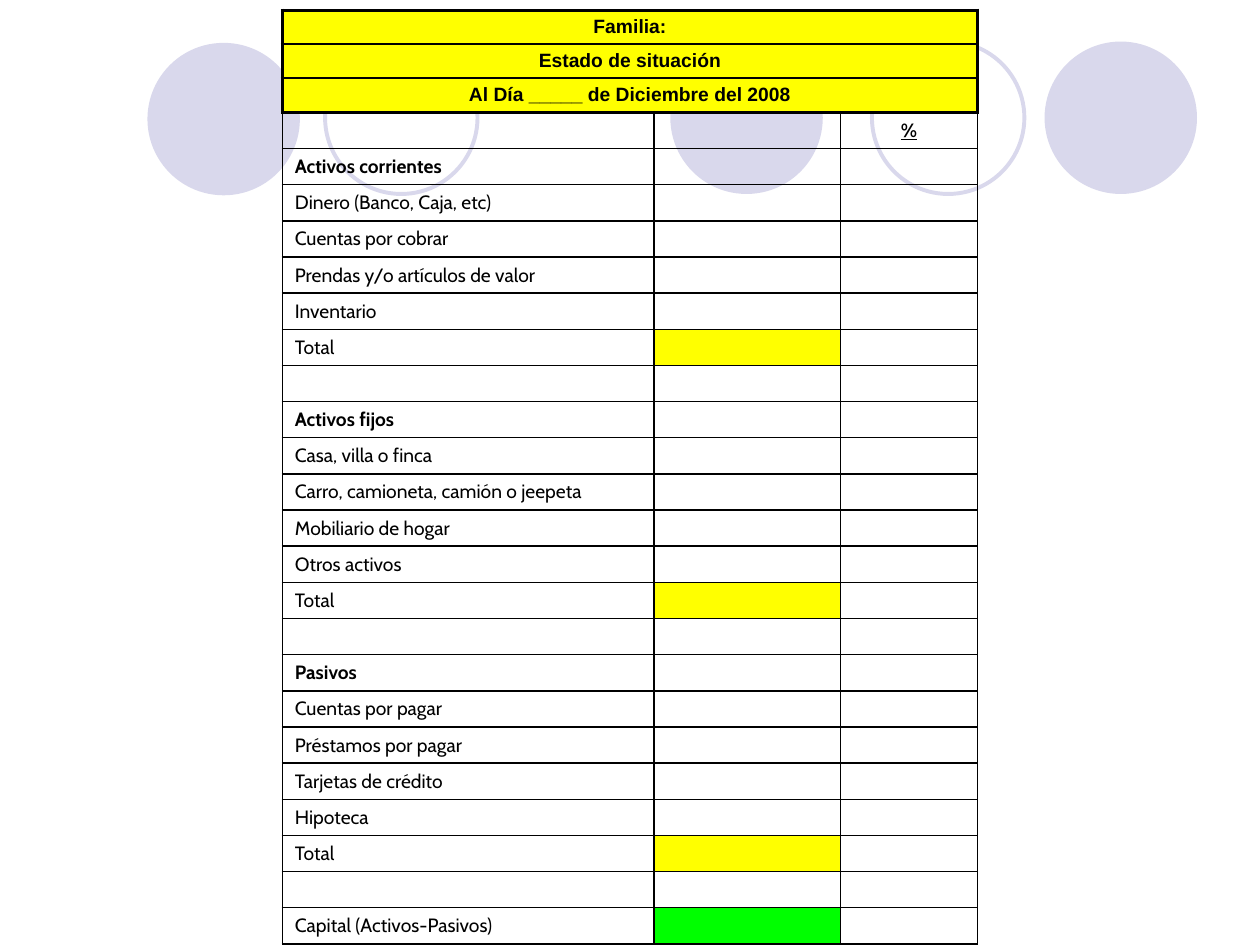
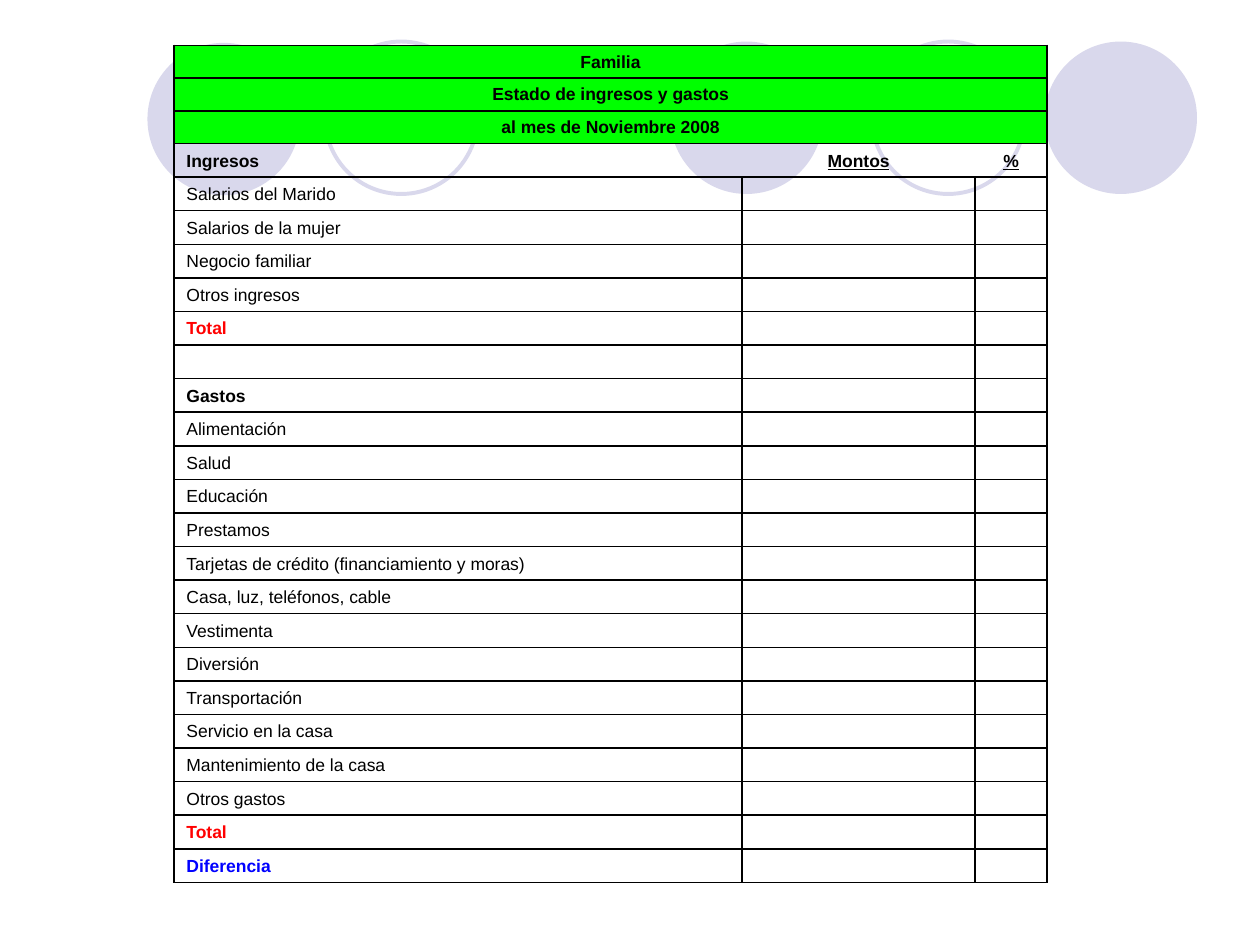
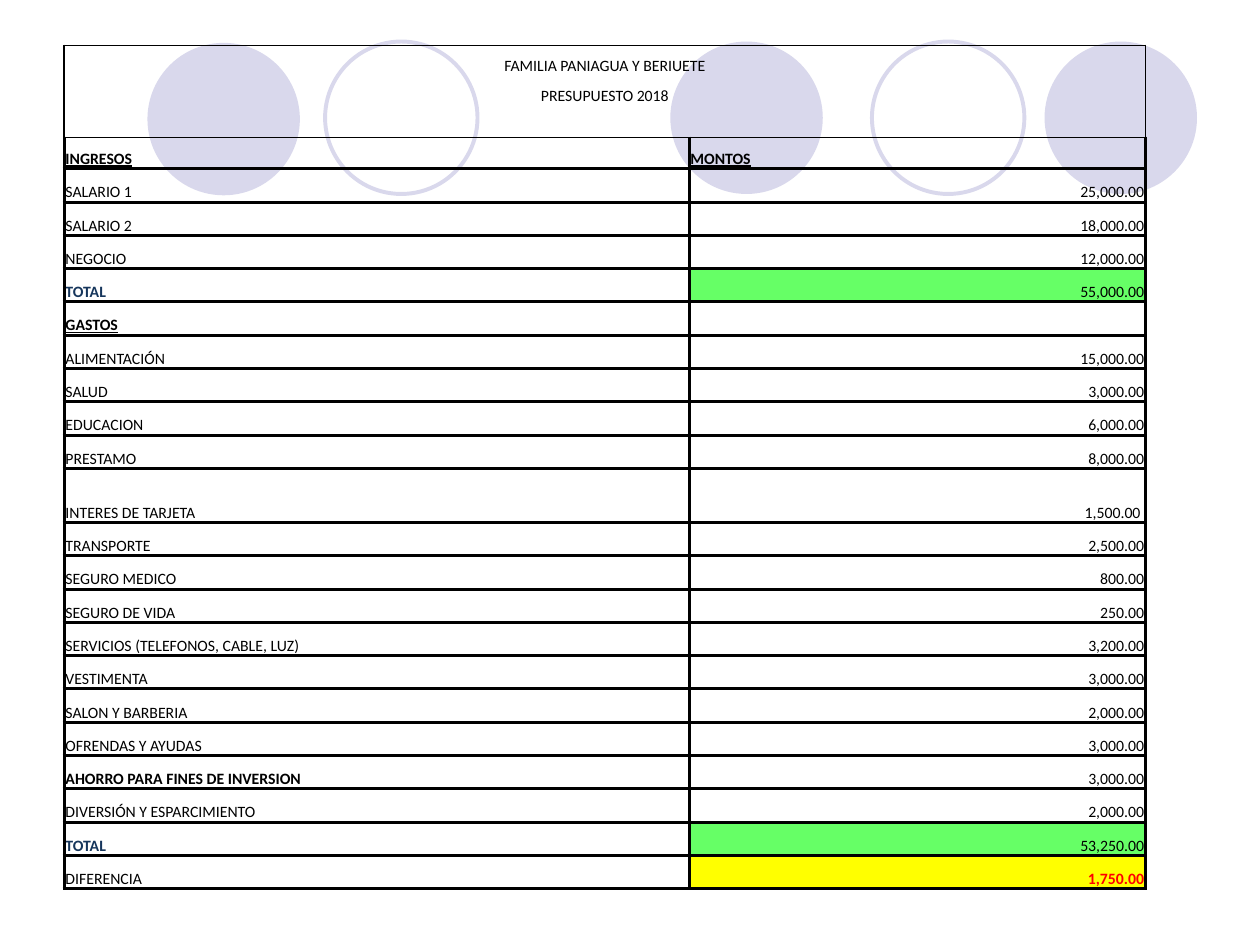
from dataclasses import dataclass, replace

from lxml.etree import SubElement
from pptx import Presentation
from pptx.dml.color import RGBColor
from pptx.enum.shapes import MSO_SHAPE
from pptx.enum.text import MSO_ANCHOR, PP_ALIGN
from pptx.oxml.ns import qn
from pptx.util import Inches, Pt

BLACK = RGBColor(0x00, 0x00, 0x00)
RED = RGBColor(0xFF, 0x00, 0x00)
BLUE = RGBColor(0x00, 0x00, 0xFF)
NAVY = RGBColor(0x16, 0x36, 0x5C)
YELLOW = RGBColor(0xFF, 0xFF, 0x00)
GREEN = RGBColor(0x00, 0xFF, 0x00)
SOFT_GREEN = RGBColor(0x66, 0xFF, 0x66)
LAVENDER = RGBColor(0xD9, 0xD8, 0xEC)

CIRCLE_SIZE = 1.21
SOLID_CIRCLES = [(5.32, 0.33), (8.29, 0.33), (1.17, 0.34)]
RING_CIRCLES = [(6.92, 0.33), (2.58, 0.33)]


@dataclass(frozen=True)
class Style:
    font: str
    size: int
    color: RGBColor = BLACK
    bold: bool = False
    underline: bool = False
    align: PP_ALIGN = PP_ALIGN.LEFT


BALANCE_TITLE = Style("Arial", 11, bold=True, align=PP_ALIGN.CENTER)
BALANCE_ITEM = Style("Cabin", 11)
BALANCE_SECTION = replace(BALANCE_ITEM, bold=True)
BALANCE_PERCENT = replace(BALANCE_SECTION, underline=True, align=PP_ALIGN.CENTER)

INCOME_ITEM = Style("Arial", 10)
INCOME_SECTION = replace(INCOME_ITEM, bold=True)
INCOME_TITLE = replace(INCOME_SECTION, align=PP_ALIGN.CENTER)
INCOME_HEADING = replace(INCOME_TITLE, underline=True)
INCOME_TOTAL = replace(INCOME_SECTION, color=RED)
INCOME_DIFFERENCE = replace(INCOME_SECTION, color=BLUE)

BUDGET_ITEM = Style("Calibri", 9)
BUDGET_TITLE = replace(BUDGET_ITEM, align=PP_ALIGN.CENTER)
BUDGET_AMOUNT = replace(BUDGET_ITEM, align=PP_ALIGN.RIGHT)
BUDGET_STRONG = replace(BUDGET_ITEM, bold=True)
BUDGET_SECTION = replace(BUDGET_STRONG, underline=True)
BUDGET_TOTAL = replace(BUDGET_STRONG, color=NAVY)
BUDGET_DIFFERENCE = replace(BUDGET_AMOUNT, color=RED, bold=True)

BALANCE_TITLES = ["Familia:", "Estado de situación", "Al Día _____ de Diciembre del 2008"]
BALANCE_ROWS = [
    "",
    "Activos corrientes",
    "Dinero (Banco, Caja, etc)",
    "Cuentas por cobrar",
    "Prendas y/o artículos de valor",
    "Inventario",
    "Total",
    "",
    "Activos fijos",
    "Casa, villa o finca",
    "Carro, camioneta, camión o jeepeta",
    "Mobiliario de hogar",
    "Otros activos",
    "Total",
    "",
    "Pasivos",
    "Cuentas por pagar",
    "Préstamos por pagar",
    "Tarjetas de crédito",
    "Hipoteca",
    "Total",
    "",
    "Capital (Activos-Pasivos)",
]
BALANCE_STYLES = dict.fromkeys(["Activos corrientes", "Activos fijos", "Pasivos"], BALANCE_SECTION)
BALANCE_FILLS = {"Total": YELLOW, "Capital (Activos-Pasivos)": GREEN}

INCOME_TITLES = ["Familia", "Estado de ingresos y gastos", "al mes de Noviembre 2008"]
INCOME_ROWS = [
    "Ingresos",
    "Salarios del Marido",
    "Salarios de la mujer",
    "Negocio familiar",
    "Otros ingresos",
    "Total",
    "",
    "Gastos",
    "Alimentación",
    "Salud",
    "Educación",
    "Prestamos",
    "Tarjetas de crédito (financiamiento y moras)",
    "Casa, luz, teléfonos, cable",
    "Vestimenta",
    "Diversión",
    "Transportación",
    "Servicio en la casa",
    "Mantenimiento de la casa",
    "Otros gastos",
    "Total",
    "Diferencia",
]
INCOME_STYLES = {
    "Ingresos": INCOME_SECTION,
    "Gastos": INCOME_SECTION,
    "Total": INCOME_TOTAL,
    "Diferencia": INCOME_DIFFERENCE,
}

BUDGET_TITLES = ["FAMILIA PANIAGUA Y BERIUETE", "PRESUPUESTO 2018", ""]
BUDGET_ROWS = [
    ("INGRESOS", "MONTOS"),
    ("SALARIO 1", "25,000.00"),
    ("SALARIO 2", "18,000.00"),
    ("NEGOCIO", "12,000.00"),
    ("TOTAL", "55,000.00"),
    ("GASTOS", ""),
    ("ALIMENTACIÓN", "15,000.00"),
    ("SALUD", "3,000.00"),
    ("EDUCACION", "6,000.00"),
    ("PRESTAMO", "8,000.00"),
    ("INTERES DE TARJETA", "1,500.00 "),
    ("TRANSPORTE", "2,500.00"),
    ("SEGURO MEDICO", "800.00"),
    ("SEGURO DE VIDA", "250.00"),
    ("SERVICIOS (TELEFONOS, CABLE, LUZ)", "3,200.00"),
    ("VESTIMENTA", "3,000.00"),
    ("SALON Y BARBERIA", "2,000.00"),
    ("OFRENDAS Y AYUDAS", "3,000.00"),
    ("AHORRO PARA FINES DE INVERSION", "3,000.00"),
    ("DIVERSIÓN Y ESPARCIMIENTO", "2,000.00"),
    ("TOTAL", "53,250.00"),
    ("DIFERENCIA", "1,750.00"),
]
BUDGET_STYLES = {
    "INGRESOS": BUDGET_SECTION,
    "GASTOS": BUDGET_SECTION,
    "TOTAL": BUDGET_TOTAL,
    "AHORRO PARA FINES DE INVERSION": BUDGET_STRONG,
}
BUDGET_AMOUNT_STYLES = {"INGRESOS": BUDGET_SECTION, "DIFERENCIA": BUDGET_DIFFERENCE}
BUDGET_FILLS = {"TOTAL": SOFT_GREEN, "DIFERENCIA": YELLOW}


def add_circle(slide, left, top, solid):
    circle = slide.shapes.add_shape(
        MSO_SHAPE.OVAL, Inches(left), Inches(top), Inches(CIRCLE_SIZE), Inches(CIRCLE_SIZE)
    )
    circle.shadow.inherit = False
    if solid:
        circle.fill.solid()
        circle.fill.fore_color.rgb = LAVENDER
        circle.line.fill.background()
    else:
        circle.fill.background()
        circle.line.color.rgb = LAVENDER
        circle.line.width = Pt(2.25)


def add_circled_slide(deck):
    slide = deck.slides.add_slide(deck.slide_layouts[6])
    for left, top in SOLID_CIRCLES:
        add_circle(slide, left, top, True)
    for left, top in RING_CIRCLES:
        add_circle(slide, left, top, False)
    return slide


def set_borders(cell, left, right, top, bottom):
    properties = cell._tc.get_or_add_tcPr()
    widths = {"a:lnL": left, "a:lnR": right, "a:lnT": top, "a:lnB": bottom}
    for tag in widths:
        for old in properties.findall(qn(tag)):
            properties.remove(old)
    for position, (tag, width) in enumerate(widths.items()):
        border = SubElement(properties, qn(tag), w=str(Pt(width)))
        if width:
            paint = SubElement(border, qn("a:solidFill"))
            SubElement(paint, qn("a:srgbClr"), val=str(BLACK))
        else:
            SubElement(border, qn("a:noFill"))
        properties.insert(position, border)


def set_row_borders(table, row, left, right, top, bottom):
    for cell in table.rows[row].cells:
        set_borders(cell, left, right, top, bottom)


def paint_cell(cell, color):
    cell.fill.solid()
    cell.fill.fore_color.rgb = color


def write_cell(cell, text, style):
    if not text:
        return
    cell.text = text
    paragraph = cell.text_frame.paragraphs[0]
    paragraph.alignment = style.align
    paragraph.font.name = style.font
    paragraph.font.size = Pt(style.size)
    paragraph.font.color.rgb = style.color
    paragraph.font.bold = style.bold
    paragraph.font.underline = style.underline


def shrink_empty_cells(table):
    for cell in table.iter_cells():
        if not cell.text:
            SubElement(cell.text_frame.paragraphs[0]._p, qn("a:endParaRPr"), sz="800")


def share_heights(count, total, fixed):
    shared = (total - sum(fixed.values())) / (count - len(fixed))
    return [fixed.get(row, shared) for row in range(count)]


def add_grid(slide, left, top, widths, heights, border):
    table = slide.shapes.add_table(
        len(heights), len(widths), Inches(left), Inches(top),
        Inches(sum(widths)), Inches(sum(heights)),
    ).table
    table.first_row = table.horz_banding = False
    for column, width in zip(table.columns, widths):
        column.width = Inches(width)
    for row, height in zip(table.rows, heights):
        row.height = Inches(height)
    for cell in table.iter_cells():
        cell.fill.background()
        cell.vertical_anchor = MSO_ANCHOR.BOTTOM
        set_borders(cell, border, border, border, border)
    return table


def write_titles(table, titles, style, color=None):
    last_column = len(table.columns) - 1
    for row, title in enumerate(titles):
        heading = table.cell(row, 0)
        heading.merge(table.cell(row, last_column))
        write_cell(heading, title, style)
        if color is not None:
            paint_cell(heading, color)


def build_balance(slide):
    first = len(BALANCE_TITLES)
    heights = share_heights(first + len(BALANCE_ROWS), 7.41, dict.fromkeys(range(first), 0.27))
    table = add_grid(slide, 2.24, 0.08, [2.95, 1.48, 1.09], heights, 1)
    write_titles(table, BALANCE_TITLES, BALANCE_TITLE, YELLOW)
    for row, (top, bottom) in enumerate([(2, 1), (1, 1), (1, 2)]):
        set_row_borders(table, row, 2, 2, top, bottom)
    set_row_borders(table, first, 1, 1, 2, 1)
    write_cell(table.cell(first, 2), "%", BALANCE_PERCENT)
    for row, label in enumerate(BALANCE_ROWS, first):
        write_cell(table.cell(row, 0), label, BALANCE_STYLES.get(label, BALANCE_ITEM))
        if label in BALANCE_FILLS:
            paint_cell(table.cell(row, 1), BALANCE_FILLS[label])
    shrink_empty_cells(table)


def build_income(slide):
    first = len(INCOME_TITLES)
    heights = share_heights(first + len(INCOME_ROWS), 6.65, dict.fromkeys(range(first), 0.26))
    table = add_grid(slide, 1.38, 0.36, [4.51, 1.85, 0.57], heights, 1)
    write_titles(table, INCOME_TITLES, INCOME_TITLE, GREEN)
    for column, (left, right) in enumerate([(1, 0), (0, 0), (0, 1)]):
        set_borders(table.cell(first, column), left, right, 1, 1)
    write_cell(table.cell(first, 1), "Montos", INCOME_HEADING)
    write_cell(table.cell(first, 2), "%", INCOME_HEADING)
    for row, label in enumerate(INCOME_ROWS, first):
        write_cell(table.cell(row, 0), label, INCOME_STYLES.get(label, INCOME_ITEM))
    shrink_empty_cells(table)


def build_budget(slide):
    first = len(BUDGET_TITLES)
    labels = [label for label, amount in BUDGET_ROWS]
    card_interest = first + labels.index("INTERES DE TARJETA")
    fixed = {0: 0.24, 1: 0.24, 2: 0.25, 3: 0.25, card_interest: 0.43}
    heights = share_heights(first + len(BUDGET_ROWS), 6.7, fixed)
    table = add_grid(slide, 0.51, 0.36, [4.96, 3.62], heights, 2)
    for cell in table.iter_cells():
        cell.margin_left = cell.margin_right = cell.margin_top = Inches(0.01)
        cell.margin_bottom = 0
    write_titles(table, BUDGET_TITLES, BUDGET_TITLE)
    for row, (top, bottom) in enumerate([(1, 0), (0, 0), (0, 1)]):
        set_row_borders(table, row, 1, 1, top, bottom)
    set_row_borders(table, first, 2, 2, 1, 2)
    for row, (label, amount) in enumerate(BUDGET_ROWS, first):
        write_cell(table.cell(row, 0), label, BUDGET_STYLES.get(label, BUDGET_ITEM))
        write_cell(table.cell(row, 1), amount, BUDGET_AMOUNT_STYLES.get(label, BUDGET_AMOUNT))
        if label in BUDGET_FILLS:
            paint_cell(table.cell(row, 1), BUDGET_FILLS[label])
    shrink_empty_cells(table)


def main():
    deck = Presentation()
    deck.slide_width = Inches(10)
    deck.slide_height = Inches(7.5)
    for build in (build_balance, build_income, build_budget):
        build(add_circled_slide(deck))
    deck.save("out.pptx")


if __name__ == "__main__":
    main()
